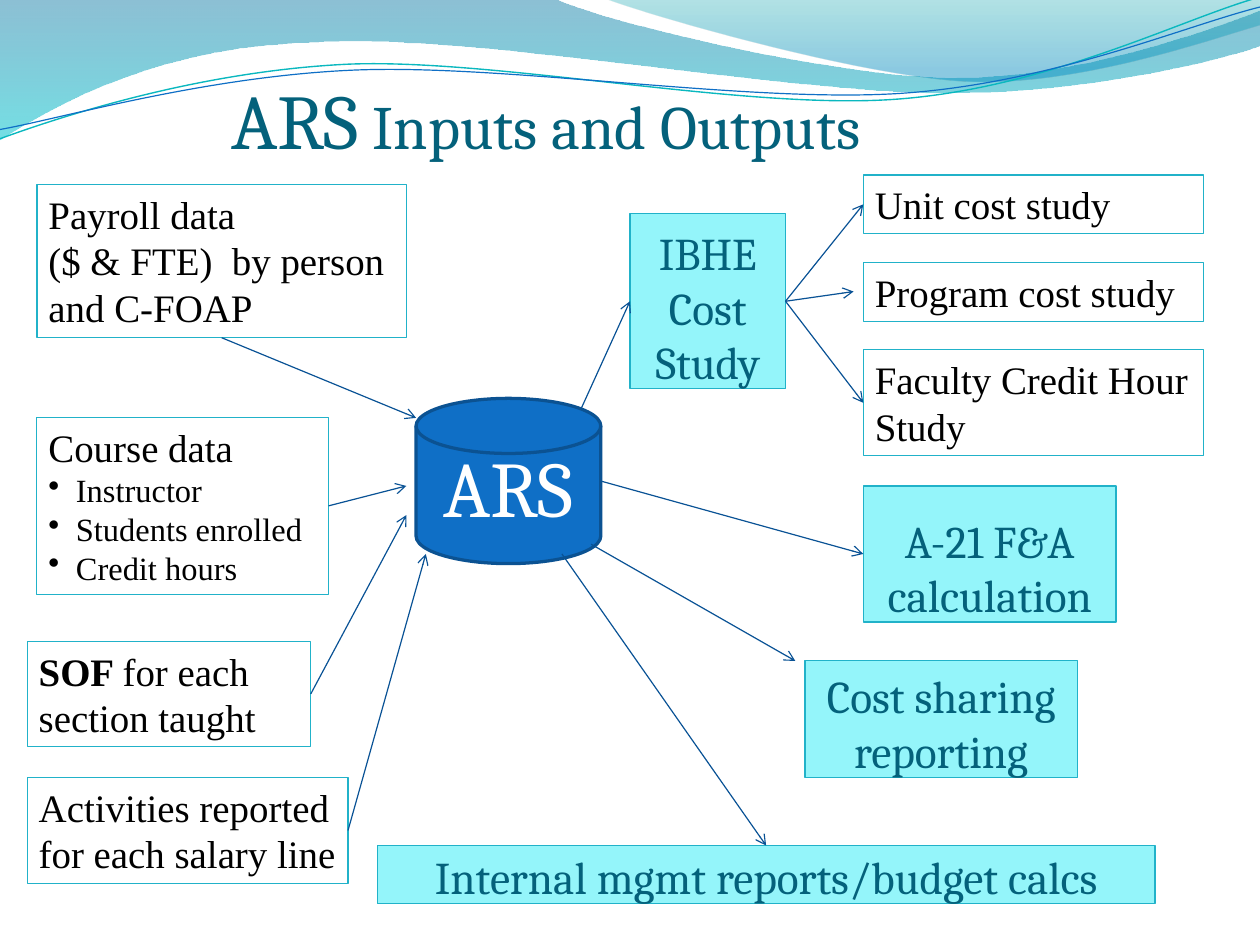
from lxml import etree
from pptx import Presentation
from pptx.dml.color import RGBColor
from pptx.enum.shapes import MSO_CONNECTOR, MSO_SHAPE
from pptx.enum.text import MSO_ANCHOR, PP_ALIGN
from pptx.oxml.ns import qn
from pptx.util import Pt

RECT, DISK = MSO_SHAPE.RECTANGLE, MSO_SHAPE.FLOWCHART_MAGNETIC_DISK
STRAIGHT = MSO_CONNECTOR.STRAIGHT
TOP, BOTTOM = MSO_ANCHOR.TOP, MSO_ANCHOR.BOTTOM
LEFT, CENTER = PP_ALIGN.LEFT, PP_ALIGN.CENTER
SERIF, HEAD = "Times New Roman", "Cambria"
COLORS = {
    "ink": "000000", "white": "FFFFFF", "title": "04617B", "edge": "21B2C9",
    "aqua": "94F5FA", "blue": "0F6FC6", "rim": "0B5292", "arrow": "095295",
    "teal": "0AB8BF", "deep": "0074A1", "cyan": "00C6CF", "sea": "00A1A9",
    "sky": "008BBF",
}


def color(name):
    """Return the named colour."""
    return RGBColor.from_string(COLORS[name])


def style(run, size, font, name):
    """Format one run."""
    run.font.size, run.font.name = Pt(size), font
    run.font.color.rgb = color(name)


def outline(slide, x, y, start, steps, close):
    """Draw a freeform of lines (2 numbers) and cubic curves (6 numbers)."""
    pts = [(Pt(x + s[i]), Pt(y + s[i + 1]))
           for s in [start] + steps for i in range(0, len(s), 2)]
    form = slide.shapes.build_freeform(*pts[0])
    form.add_line_segments(pts[1:], close=close)
    shape = form.convert_to_shape()
    shape.shadow.inherit = False
    nodes = iter(list(shape._element.spPr.iter(qn("a:lnTo"))))
    for step in steps:
        parts = [next(nodes) for _ in range(len(step) // 2)]
        if len(parts) == 3:
            parts[0].addprevious(etree.Element(qn("a:cubicBezTo")))
            curve = parts[0].getprevious()
            for part in parts:
                curve.append(part[0])
                part.getparent().remove(part)
    return shape


def band(slide, x, y, start, steps, stops):
    """Draw a closed wave with a see-through gradient."""
    shape = outline(slide, x, y, start, steps, True)
    shape.line.fill.background()
    shape.fill.gradient()
    shape.fill.gradient_angle = 270
    for stop, (pos, name, alpha) in zip(shape.fill.gradient_stops, stops):
        stop.position, stop.color.rgb = pos, color(name)
    nodes = shape._element.spPr.iter(qn("a:srgbClr"))
    for node, (pos, name, alpha) in zip(nodes, stops):
        etree.SubElement(node, qn("a:alpha"), val=str(alpha * 1000))


def waves(slide, x, y):
    """Draw the wave header."""
    band(slide, x, y, (-0.7, 0), [
        (342.5, -0.7), (370, 13, 516, 48, 590, 48), (663, 48, 745, 19.4, 777.6, 6.5),
        (778.3, 28), (765, 34, 676, 58.3, 580, 57.6), (484, 57.6, 297, 21.6, 200, 26),
        (101, 27.4, 36, 63.4, -0.7, 87)], [(0, "deep", 45), (1, "cyan", 55)])
    band(slide, x, y, (373, -0.7), [
        (396, 8.6, 530.6, 47.5, 597.6, 50.4), (665.3, 53.3, 747.4, 24.5, 777.6, 15.8),
        (777.6, 0)], [(0, "sea", 30), (0.8, "sky", 45)])
    lines = [
        ("teal", 0.85, (-1.4, 67.3), [
            (36.5, 55.5, 122.7, 31.4, 215.7, 31.5), (307.9, 32.2, 459.6, 71.9, 553.5, 69),
            (647.3, 66.2, 731.3, 27.6, 777.9, 16.9)]),
        ("blue", 0.75, (-1.2, 61.6), [
            (35.8, 56.9, 127.7, 34.5, 220.6, 35.3), (313.6, 36.1, 463.5, 67.6, 556.5, 65.5),
            (649.6, 63.4, 732.5, 32, 779.1, 22.7)]),
    ]
    for name, width, start, steps in lines:
        shape = outline(slide, x, y, start, steps, False)
        shape.rotation = 357.3
        shape.fill.background()
        shape.line.color.rgb, shape.line.width = color(name), Pt(width)


def block(slide, box, fill, edge, width=0.75, kind=RECT):
    """Draw an outlined shape."""
    shape = slide.shapes.add_shape(kind, *map(Pt, box))
    shape.shadow.inherit = False
    shape.line.color.rgb, shape.line.width = color(edge), Pt(width)
    if fill:
        shape.fill.solid()
        shape.fill.fore_color.rgb = color(fill)
    else:
        shape.fill.background()
    return shape


def frame(shape, anchor):
    """Set up wrapping, anchor and insets of a shape's text."""
    text = shape.text_frame
    text.word_wrap, text.vertical_anchor = True, anchor
    if anchor == BOTTOM:
        text.margin_left = text.margin_right = text.margin_bottom = 0
    return text


def note(slide, box, text):
    """Draw a white box with plain text."""
    shape = block(slide, box, None, "edge")
    body = frame(shape, TOP)
    body.text = text
    for para in body.paragraphs:
        para.alignment = LEFT
        style(para.runs[0], 24, SERIF, "ink")
    return shape


def result(slide, box, text):
    """Draw an aqua box with centred text."""
    shape = block(slide, box, "aqua", "edge")
    body = frame(shape, BOTTOM)
    body.text = text
    body.paragraphs[0].alignment = CENTER
    style(body.paragraphs[0].runs[0], 28, HEAD, "title")
    return shape


def arrow(slide, start, end, source=None, target=None):
    """Draw an arrow, joined to (shape, side) where given."""
    line = slide.shapes.add_connector(STRAIGHT, *map(Pt, start + end))
    if source:
        line.begin_connect(*source)
    if target:
        line.end_connect(*target)
    line.line.color.rgb, line.line.width = color("arrow"), Pt(0.75)
    etree.SubElement(line.line._get_or_add_ln(), qn("a:tailEnd"), type="arrow")
    etree.SubElement(line._element.spPr, qn("a:effectLst"))


def title(slide, x, y, w, h):
    """Write the slide title."""
    body = frame(slide.shapes.add_textbox(*map(Pt, (x, y, w, h))), BOTTOM)
    para = body.paragraphs[0]
    for text, size in (("ARS", 47.8), (" Inputs and Outputs", 38)):
        run = para.add_run()
        run.text = text
        style(run, size, HEAD, "title")


def hub(slide, x, y, w, h):
    """Draw the central disk and its label."""
    block(slide, (x, y, w, h), "blue", "rim", 2, DISK)
    label = slide.shapes.add_textbox(*map(Pt, (x + 6, y + 24, w - 12, 60)))
    body = frame(label, BOTTOM)
    body.text = "ARS"
    para = body.paragraphs[0]
    para.alignment, para.line_spacing = CENTER, 0.9
    style(para.runs[0], 48.6, HEAD, "white")


def inputs(slide, x, y):
    """Draw the input boxes and their arrows to the hub."""
    pay = note(slide, (x + 6, y, 228, 94.5),
               "Payroll data\n($ & FTE)  by person and C-FOAP")
    course = note(slide, (x + 6, y + 143.8, 180, 109),
                  "Course data\nInstructor\nStudents enrolled\nCredit hours")
    for para in course.text_frame.paragraphs[1:]:
        para.runs[0].font.size = Pt(20)
        props = para._p.get_or_add_pPr()
        props.set("marL", str(Pt(17)))
        props.set("indent", str(-Pt(17)))
        etree.SubElement(props, qn("a:buFontTx"))
        etree.SubElement(props, qn("a:buChar"), char="•")
    fund = note(slide, (x, y + 282, 175, 64.8), "SOF ")
    para = fund.text_frame.paragraphs[0]
    para.runs[0].font.bold = True
    run = para.add_run()
    run.text = "for each section taught"
    style(run, 24, SERIF, "ink")
    work = note(slide, (x, y + 366, 198, 65.4), "Activities reported for each salary line")
    for shape, side, dx, dy in ((pay, 2, 240, 144), (course, 3, 234, 186),
                                (fund, 3, 234, 204), (work, 3, 246, 228)):
        arrow(slide, (x, y), (x + dx, y + dy), (shape, side))


def outputs(slide, x, y):
    """Draw the output boxes and their arrows from the hub."""
    cost = result(slide, (x + 156, y + 24, 96, 108), "IBHE Cost Study")
    studies = [note(slide, (x + 300, y + 54 * i, 210, h), text) for i, (text, h) in enumerate((
        ("Unit cost study", 36.3), ("Program cost study", 36.3),
        ("Faculty Credit Hour Study", 65.4)))]
    for i, study in enumerate(studies):
        arrow(slide, (x, y), (x + 294, y + 72), (cost, 3), None if i == 1 else (study, 1))
    rate = result(slide, (x + 300, y + 192, 156, 84), "A-21 F&A calculation")
    result(slide, (x + 264, y + 300, 168, 72), "Cost sharing reporting")
    report = result(slide, (x, y + 414, 480, 36), "Internal mgmt reports/budget calcs")
    for dx, dy, target in ((126, 144, (cost, 1)), (138, 189, (rate, 1)),
                           (132, 228, None), (114, 234, (report, 0))):
        arrow(slide, (x + dx, y + dy), (x + 258, y + 300), None, target)


def main():
    """Build the slide."""
    deck = Presentation()
    deck.slide_width, deck.slide_height = Pt(777.6), Pt(576)
    slide = deck.slides.add_slide(deck.slide_layouts[6])
    waves(slide, 0, 0)
    hub(slide, 256.8, 246, 114, 102)
    title(slide, 142.8, 36, 577, 66)
    inputs(slide, 16.8, 114)
    outputs(slide, 232.8, 108)
    deck.save("out.pptx")


if __name__ == "__main__":
    main()
